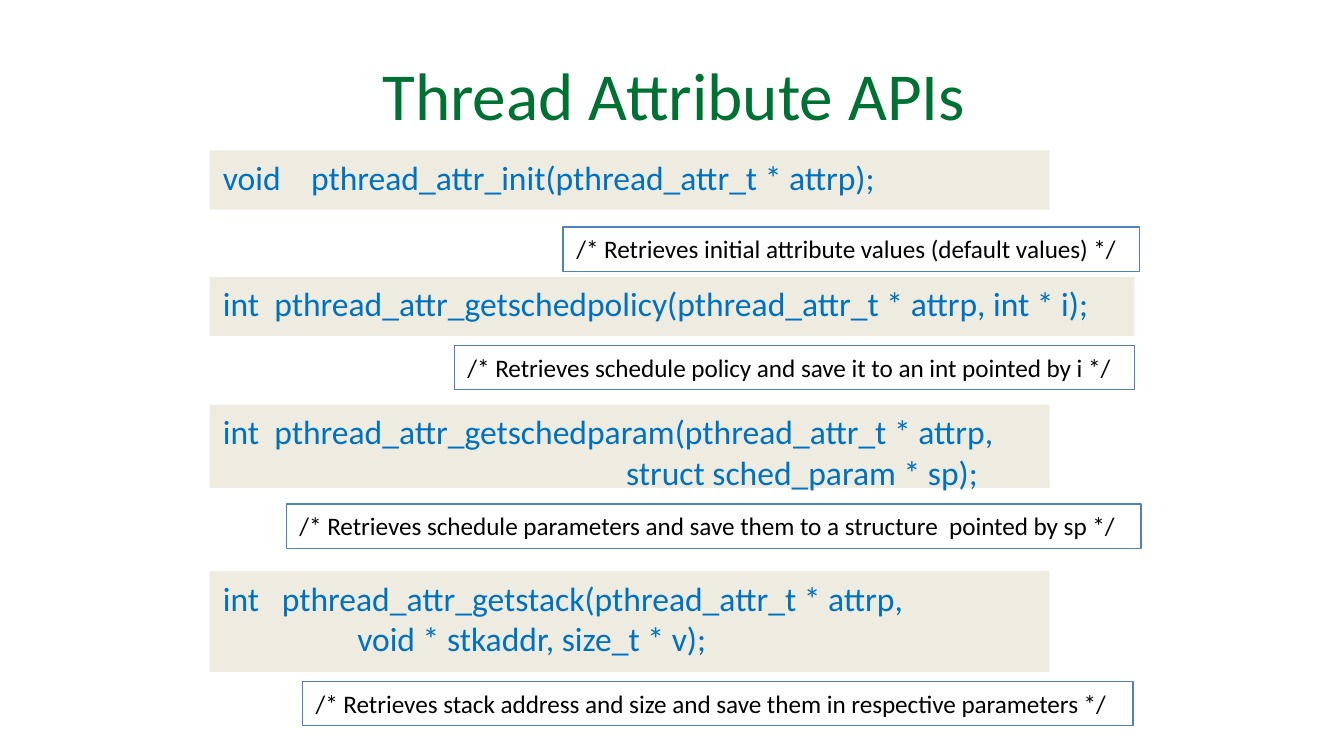
from pptx import Presentation
from pptx.dml.color import RGBColor
from pptx.enum.shapes import MSO_SHAPE
from pptx.enum.text import MSO_ANCHOR, MSO_AUTO_SIZE, PP_ALIGN
from pptx.util import Inches, Pt

RECT = MSO_SHAPE.RECTANGLE
TOP, MIDDLE = MSO_ANCHOR.TOP, MSO_ANCHOR.MIDDLE
LEFT, CENTER = PP_ALIGN.LEFT, PP_ALIGN.CENTER
FIT = MSO_AUTO_SIZE.SHAPE_TO_FIT_TEXT

GREEN = RGBColor(0x00, 0x70, 0x33)
BLUE = RGBColor(0x00, 0x70, 0xC0)
BEIGE = RGBColor(0xEE, 0xEC, 0xE1)
BORDER = RGBColor(0x4F, 0x81, 0xBD)
BLACK = RGBColor(0x00, 0x00, 0x00)

CODE_LEFT = 1.56
NOTE_HEIGHT = 0.33

PROTOTYPES = [
    (1.12, 6.25, 0.44, 0, ["void    pthread_attr_init(pthread_attr_t * attrp);"]),
    (2.06, 6.88, 0.44, 0,
     ["int  pthread_attr_getschedpolicy(pthread_attr_t * attrp, int * i);"]),
    (3.01, 6.25, 0.62, 3,
     ["int  pthread_attr_getschedparam(pthread_attr_t * attrp,",
      "struct sched_param * sp);"]),
    (4.25, 6.25, 0.75, 1,
     ["int   pthread_attr_getstack(pthread_attr_t * attrp,",
      "void * stkaddr, size_t * v);"]),
]
NOTES = [
    (4.19, 1.69, 4.29, "/* Retrieves initial attribute values (default values) */"),
    (3.38, 2.57, 5.06,
     "/* Retrieves schedule policy and save it to an int pointed by i */"),
    (2.13, 3.75, 6.36,
     "/* Retrieves schedule parameters and save them to a structure  pointed by sp */"),
    (2.25, 5.07, 6.18,
     "/* Retrieves stack address and size and save them in respective parameters */"),
]


def write_lines(tf, lines, size, color, align=LEFT, indent=0):
    """Write one paragraph per line, indenting those after the first."""
    for i, line in enumerate(lines):
        p = tf.paragraphs[0] if i == 0 else tf.add_paragraph()
        p.alignment = align
        if i and indent:
            p._p.get_or_add_pPr().set("marL", str(Inches(indent)))
        r = p.add_run()
        r.text = line
        for name, value in {"name": "Calibri", "size": Pt(size)}.items():
            setattr(r.font, name, value)
        r.font.color.rgb = color


def add_title(s, text):
    """Add the centred slide title."""
    sp = s.shapes.add_textbox(Inches(0.53), Inches(0.23), Inches(8.97), Inches(0.94))
    for name, value in {"word_wrap": True, "vertical_anchor": MIDDLE}.items():
        setattr(sp.text_frame, name, value)
    write_lines(sp.text_frame, [text], 36, GREEN, CENTER)


def add_box(s, left, top, width, height, frame):
    """Add a plain rectangle with the given text frame settings."""
    sp = s.shapes.add_shape(RECT, Inches(left), Inches(top), Inches(width), Inches(height))
    sp.shadow.inherit = False
    for name, value in {"vertical_anchor": TOP, **frame}.items():
        setattr(sp.text_frame, name, value)
    return sp


def add_prototype(s, top, width, height, indent, lines):
    """Add a filled box holding a function prototype."""
    sp = add_box(s, CODE_LEFT, top, width, height, {"word_wrap": True})
    sp.fill.solid()
    sp.fill.fore_color.rgb = BEIGE
    sp.line.fill.background()
    write_lines(sp.text_frame, lines, 18, BLUE, indent=indent)


def add_note(s, left, top, width, text):
    """Add an outlined box holding a code comment."""
    sp = add_box(s, left, top, width, NOTE_HEIGHT, {"word_wrap": False, "auto_size": FIT})
    sp.fill.background()
    sp.line.color.rgb = BORDER
    sp.line.width = Pt(0.75)
    write_lines(sp.text_frame, [text], 13.5, BLACK)


def main():
    """Build the slide and save it."""
    prs = Presentation()
    prs.slide_width = Inches(10)
    prs.slide_height = prs.slide_width * 9 // 16
    s = prs.slides.add_slide(prs.slide_layouts[6])
    add_title(s, "Thread Attribute APIs")
    for prototype, note in zip(PROTOTYPES, NOTES):
        add_prototype(s, *prototype)
        add_note(s, *note)
    prs.save("out.pptx")


if __name__ == "__main__":
    main()
